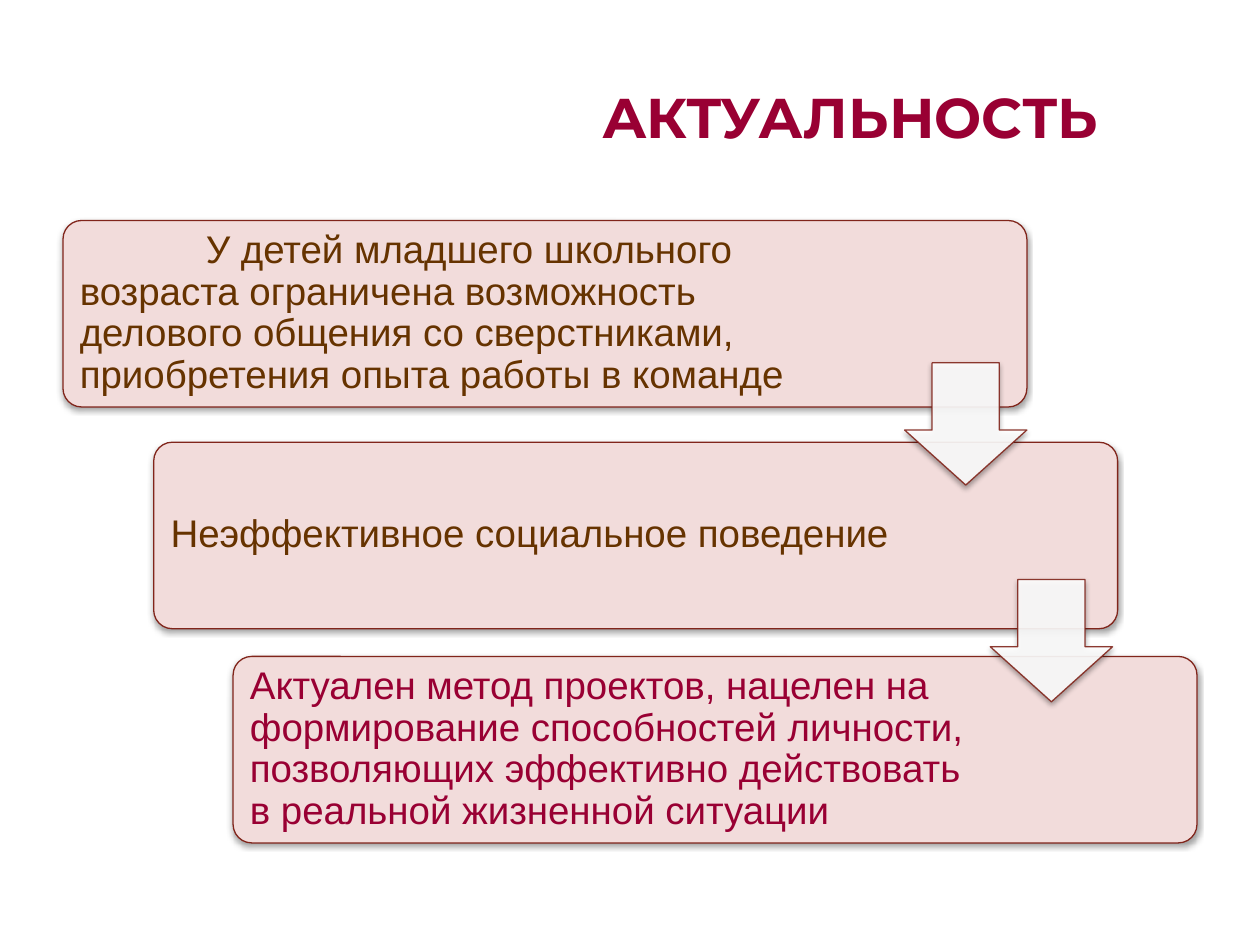
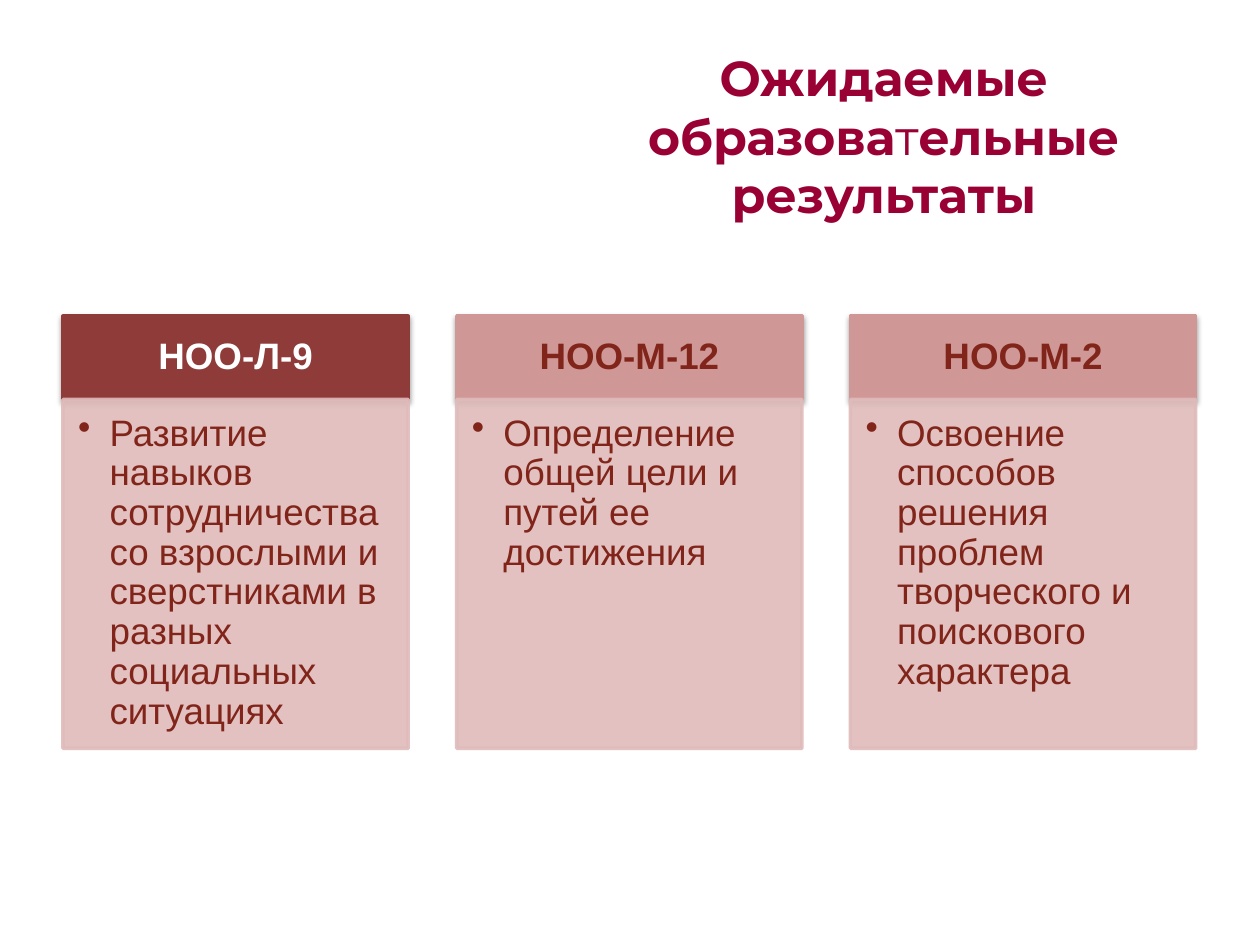
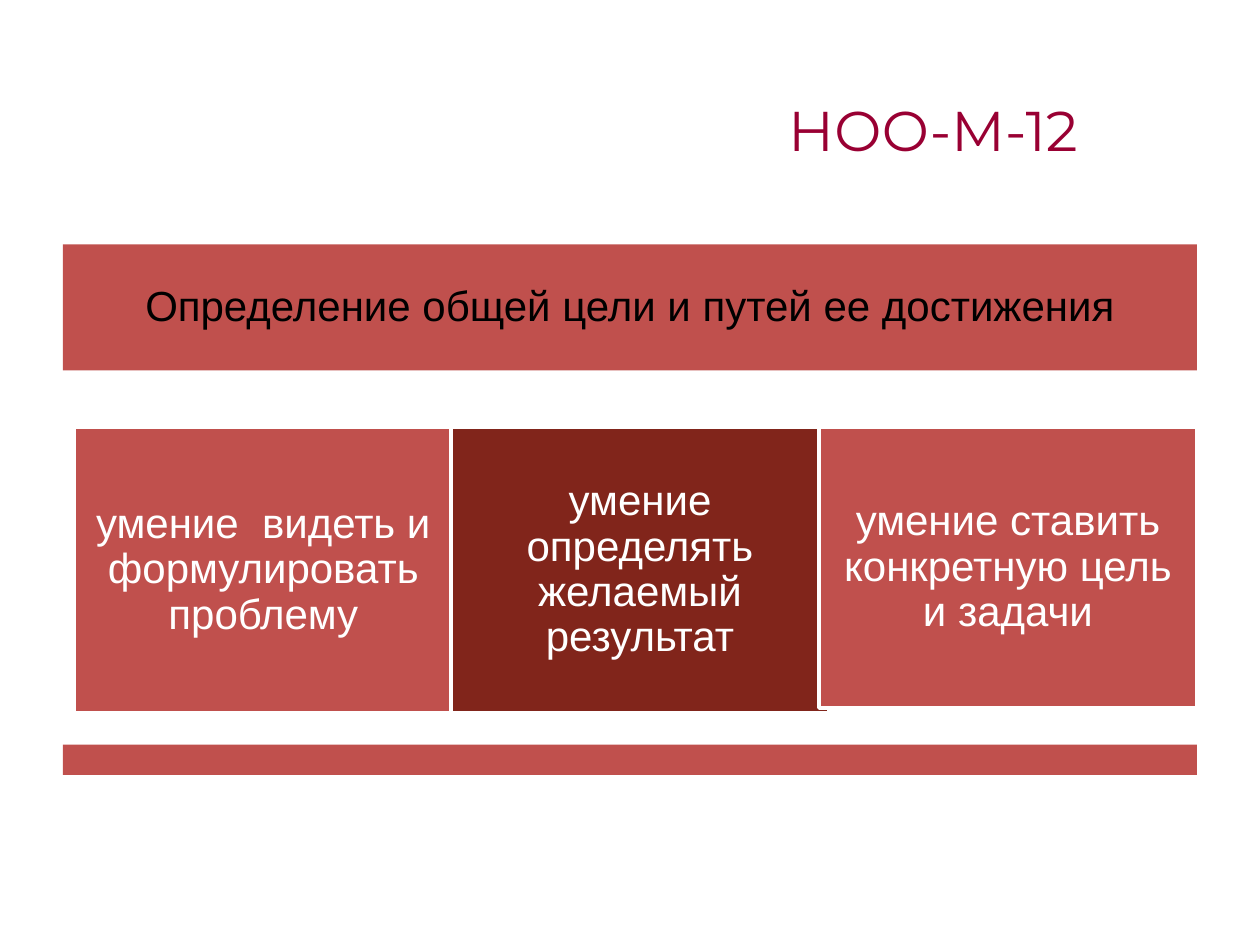
import pptx
import pptx.util
import pptx.dml.color
import pptx.enum.shapes
import pptx.enum.text
import pptx.oxml
import pptx.oxml.ns
import lxml.etree

Inches = pptx.util.Inches
Pt = pptx.util.Pt
SHAPE = pptx.enum.shapes.MSO_SHAPE
ALIGN = pptx.enum.text.PP_ALIGN
ANCHOR = pptx.enum.text.MSO_ANCHOR
qn = pptx.oxml.ns.qn

WINE = "990033"
BROWN = "663300"
DARK = "81251B"
RED = "C0504D"
PINK = "F2DCDB"
ROSE = "CF9796"
PALE = "DFBBBA"
WHITE = "FFFFFF"
BLACK = "000000"


def tint(text):
    return pptx.dml.color.RGBColor.from_string(text)


def fade(shape, share):
    for color in shape._element.spPr.iter(qn("a:srgbClr")):
        alpha = lxml.etree.SubElement(color, qn("a:alpha"))
        alpha.set("val", str(share * 1000))


def shade(shape):
    effects = shape._element.spPr.find(qn("a:effectLst"))
    effects.append(pptx.oxml.parse_xml(
        f'<a:outerShdw {pptx.oxml.ns.nsdecls("a")} blurRad="{Pt(3.1)}" '
        f'dist="{Pt(1.7)}" dir="5400000" rotWithShape="0">'
        '<a:srgbClr val="000000"><a:alpha val="36000"/></a:srgbClr>'
        '</a:outerShdw>'))


def draw(slide, kind, box, fill, line=None, width=2, alpha=None,
         shadow=False, adjust=()):
    shape = slide.shapes.add_shape(kind, *map(Inches, box))
    shape.shadow.inherit = False
    for index, value in enumerate(adjust):
        shape.adjustments[index] = value
    shape.fill.solid()
    shape.fill.fore_color.rgb = tint(fill)
    if line:
        shape.line.color.rgb = tint(line)
        shape.line.width = Pt(width)
    else:
        shape.line.fill.background()
    if alpha:
        fade(shape, alpha)
    if shadow:
        shade(shape)
    return shape


def write(shape, parts, size, color, font="Arial", align=ALIGN.CENTER,
          anchor=ANCHOR.MIDDLE, insets=(0.1, 0.1, 0.1, 0.1), spacing=0.9):
    frame = shape.text_frame
    frame.word_wrap = True
    frame.vertical_anchor = anchor
    (frame.margin_left, frame.margin_top,
     frame.margin_right, frame.margin_bottom) = map(Inches, insets)
    para = frame.paragraphs[0]
    para.alignment = align
    para.line_spacing = spacing
    for text, bold in parts:
        run = para.add_run()
        run.text = text
        run.font.name = font
        run.font.size = Pt(size)
        run.font.bold = bold
        run.font.color.rgb = tint(color)
    return para


def indent(para, first, left=0):
    props = para._p.get_or_add_pPr()
    props.set("marL", str(Inches(left)))
    props.set("indent", str(Inches(first)))
    return props


def bullet(para):
    props = indent(para, -0.25, 0.25)
    lxml.etree.SubElement(props, qn("a:buChar")).set("char", "•")


def title(slide, box, parts, size=32):
    shape = slide.shapes.add_textbox(*map(Inches, box))
    write(shape, parts, size, WINE, "Montserrat",
          insets=(0.1, 0.05, 0.1, 0.05), spacing=1.0)


def step(slide, left, top, text, color):
    shape = draw(slide, SHAPE.ROUNDED_RECTANGLE, (left, top, 7.65, 1.48),
                 PINK, DARK, 0.75, shadow=True, adjust=(0.1,))
    return write(shape, [(text, False)], 22, color, align=ALIGN.LEFT,
                 insets=(0.09, 0.09, 1.74, 0.09))


def arrow(slide, left, top):
    draw(slide, SHAPE.DOWN_ARROW, (left, top, 0.97, 0.97), WHITE, DARK, 0.75,
         alpha=90, shadow=True, adjust=(0.55, 0.45))


def card(slide, left, head, body, fill, color):
    cap = draw(slide, SHAPE.RECTANGLE, (left, 2.51, 2.74, 0.66), fill, fill,
               shadow=True)
    write(cap, [(head, True)], 21, color, insets=(0.16, 0.09, 0.16, 0.09))
    panel = draw(slide, SHAPE.RECTANGLE, (left, 3.17, 2.74, 2.77), PALE, PALE,
                 alpha=90)
    bullet(write(panel, [(body, False)], 21, DARK, align=ALIGN.LEFT,
                 anchor=ANCHOR.TOP, insets=(0.12, 0.12, 0.16, 0.18)))


def tile(slide, box, text, fill):
    shape = draw(slide, SHAPE.RECTANGLE, box, fill, WHITE)
    write(shape, [(text, False)], 24, WHITE)


def need(slide):
    title(slide, (4, 0.3, 5.5, 1.25), [("АКТУАЛЬНОСТЬ", True)])
    lead = step(slide, 0.5, 1.75,
                "У детей младшего школьного возраста ограничена возможность "
                "делового общения со сверстниками, приобретения опыта работы "
                "в команде", BROWN)
    indent(lead, 1)
    step(slide, 1.22, 3.51, "Неэффективное социальное поведение", BROWN)
    step(slide, 1.85, 5.21,
         "Актуален метод проектов, нацелен на формирование способностей "
         "личности, позволяющих эффективно действовать в реальной жизненной "
         "ситуации", WINE)
    arrow(slide, 7.18, 2.88)
    arrow(slide, 7.86, 4.6)


def goals(slide):
    title(slide, (4.53, 0.6, 4.97, 0.95),
          [("Ожидаемые образова", True), ("т", False),
           ("ельные результаты", True)], 28)
    cards = [
        ("НОО-Л-9", "Развитие навыков сотрудничества со взрослыми и "
         "сверстниками в разных социальных ситуациях", "8E3B39", WHITE),
        ("НОО-М-12", "Определение общей цели и путей ее достижения",
         ROSE, DARK),
        ("НОО-М-2", "Освоение способов решения проблем творческого и "
         "поискового характера", ROSE, DARK),
    ]
    for index, entry in enumerate(cards):
        card(slide, 0.5 + index * 3.125, *entry)


def skills(slide):
    title(slide, (5.31, 0.4, 4.19, 1.25), [("НОО-М-12", False)])
    band = draw(slide, SHAPE.RECTANGLE, (0.5, 1.94, 9, 1), RED)
    write(band, [("Определение общей цели и путей ее достижения", False)],
          24, BLACK)
    tile(slide, (0.59, 3.39, 3, 2.27),
         "умение  видеть и формулировать проблему", RED)
    tile(slide, (3.58, 3.39, 3, 2.27),
         "умение определять желаемый результат", DARK)
    tile(slide, (6.5, 3.39, 3, 2.23),
         "умение ставить конкретную цель и задачи", RED)
    draw(slide, SHAPE.RECTANGLE, (0.5, 5.91, 9, 0.24), RED)


def main():
    deck = pptx.Presentation()
    deck.slide_width = Inches(10)
    deck.slide_height = Inches(7.5)
    for build in (need, goals, skills):
        build(deck.slides.add_slide(deck.slide_layouts[6]))
    deck.save("out.pptx")


if __name__ == "__main__":
    main()
